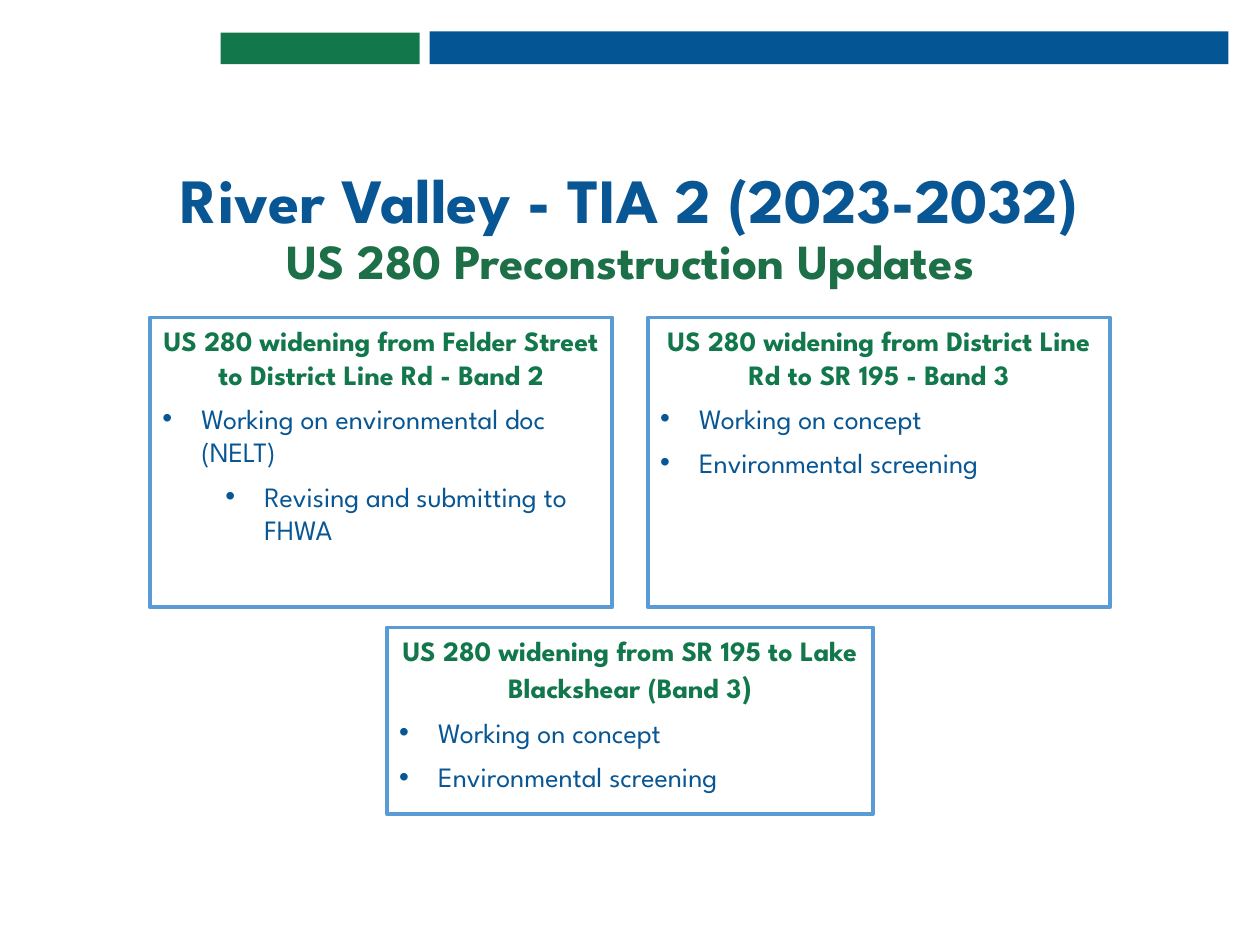
import copy
from dataclasses import dataclass
from typing import Optional

import lxml.etree
import pptx
import pptx.dml.color
import pptx.enum.shapes
import pptx.enum.text
import pptx.oxml.ns
import pptx.util

Inches = pptx.util.Inches
Pt = pptx.util.Pt
ALIGN = pptx.enum.text.PP_ALIGN
ANCHOR = pptx.enum.text.MSO_ANCHOR
RECTANGLE = pptx.enum.shapes.MSO_SHAPE.RECTANGLE


@dataclass(frozen=True)
class Theme:
    font: str = "League Spartan"
    blue_bar: str = "035594"
    blue_text: str = "085694"
    green: str = "12784B"
    subtitle_green: str = "1C6F47"
    outline: str = "5B9BD5"
    white: str = "FFFFFF"
    title_size: int = 36
    subtitle_size: int = 28
    body_size: int = 16
    paren_size: int = 18


THEME = Theme()


@dataclass(frozen=True)
class Area:
    left: float
    top: float
    width: float
    height: float

    def lengths(self) -> tuple:
        return tuple(Inches(v) for v in (self.left, self.top, self.width, self.height))


@dataclass(frozen=True)
class Bullet:
    text: str
    level: int = 0


@dataclass(frozen=True)
class Project:
    area: Area
    heading: str
    bullets: tuple[Bullet, ...]
    heading_end: str = ""


def rgb(color: str) -> pptx.dml.color.RGBColor:
    return pptx.dml.color.RGBColor.from_string(color)


def add_run(paragraph, text: str, size: int, color: str, bold: bool):
    run = paragraph.add_run()
    run.text = text
    formats = {"name": THEME.font, "size": Pt(size), "bold": bold}
    for attribute, value in formats.items():
        setattr(run.font, attribute, value)
    run.font.color.rgb = rgb(color)
    return run


def add_rectangle(slide, area: Area, fill: str, outline: Optional[str] = None):
    rectangle = slide.shapes.add_shape(RECTANGLE, *area.lengths())
    rectangle.shadow.inherit = False
    rectangle.fill.solid()
    rectangle.fill.fore_color.rgb = rgb(fill)
    if outline:
        rectangle.line.color.rgb = rgb(outline)
        rectangle.line.width = Pt(2.25)
    else:
        rectangle.line.fill.background()
    return rectangle


def add_bullet(frame, bullet: Bullet) -> None:
    paragraph = frame.add_paragraph()
    paragraph.level = bullet.level
    paragraph.alignment = ALIGN.LEFT
    paragraph.space_before = Pt(6)
    properties = paragraph._p.get_or_add_pPr()
    properties.set("marL", str(Inches(0.31 + 0.5 * bullet.level)))
    properties.set("indent", str(Inches(-0.31)))
    for tag, name, value in (("a:buFont", "typeface", "Arial"), ("a:buChar", "char", "•")):
        lxml.etree.SubElement(properties, pptx.oxml.ns.qn(tag)).set(name, value)
    add_run(paragraph, bullet.text, THEME.body_size, THEME.blue_text, False)


def add_project(slide, project: Project) -> None:
    frame = add_rectangle(slide, project.area, THEME.white, THEME.outline).text_frame
    frame.word_wrap = True
    frame.vertical_anchor = ANCHOR.TOP
    heading = frame.paragraphs[0]
    heading.alignment = ALIGN.CENTER
    add_run(heading, project.heading, THEME.body_size, THEME.green, True)
    if project.heading_end:
        add_run(heading, project.heading_end, THEME.paren_size, THEME.green, True)
    for bullet in project.bullets:
        add_bullet(frame, bullet)


def fill_title(title, area: Area) -> None:
    for attribute, value in zip(("left", "top", "width", "height"), area.lengths()):
        setattr(title, attribute, value)
    frame = title.text_frame
    formats = {
        "word_wrap": True,
        "vertical_anchor": ANCHOR.BOTTOM,
        "auto_size": pptx.enum.text.MSO_AUTO_SIZE.NONE,
    }
    for attribute, value in formats.items():
        setattr(frame, attribute, value)
    paragraph = frame.paragraphs[0]
    paragraph.alignment = ALIGN.CENTER
    paragraph.line_spacing = 0.9
    program = add_run(paragraph, "River Valley - TIA 2 (2023-2032)",
                      THEME.title_size, THEME.blue_text, True)
    paragraph.add_line_break()
    # The line break takes the size of the line it ends
    paragraph._p[-1].append(copy.deepcopy(program._r.rPr))
    add_run(paragraph, "US 280 Preconstruction Updates",
            THEME.subtitle_size, THEME.subtitle_green, True)


CONCEPT_STAGE = (Bullet("Working on concept"), Bullet("Environmental screening"))
PROJECTS = (
    Project(
        Area(1.19, 2.52, 3.67, 2.3),
        "US 280 widening from Felder Street to District Line Rd - Band 2",
        (Bullet("Working on environmental doc (NELT)"),
         Bullet("Revising and submitting to FHWA", level=1)),
    ),
    Project(
        Area(5.14, 2.52, 3.67, 2.3),
        "US 280 widening from District Line Rd to SR 195 - Band 3",
        CONCEPT_STAGE,
    ),
    Project(
        Area(3.07, 4.98, 3.86, 1.48),
        "US 280 widening from SR 195 to Lake Blackshear (Band 3",
        CONCEPT_STAGE,
        heading_end=")",
    ),
)


def main() -> None:
    deck = pptx.Presentation()
    deck.slide_width, deck.slide_height = Inches(10), Inches(7.5)
    slide = deck.slides.add_slide(deck.slide_layouts.get_by_name("Title Only"))

    # Header bars
    add_rectangle(slide, Area(3.41, 0.25, 6.34, 0.26), THEME.blue_bar)
    add_rectangle(slide, Area(1.75, 0.26, 1.58, 0.25), THEME.green)

    # Title and subtitle
    fill_title(slide.shapes.title, Area(0.99, 1.23, 8.02, 1.12))

    # Project status boxes
    for project in PROJECTS:
        add_project(slide, project)

    deck.save("out.pptx")


if __name__ == "__main__":
    main()
